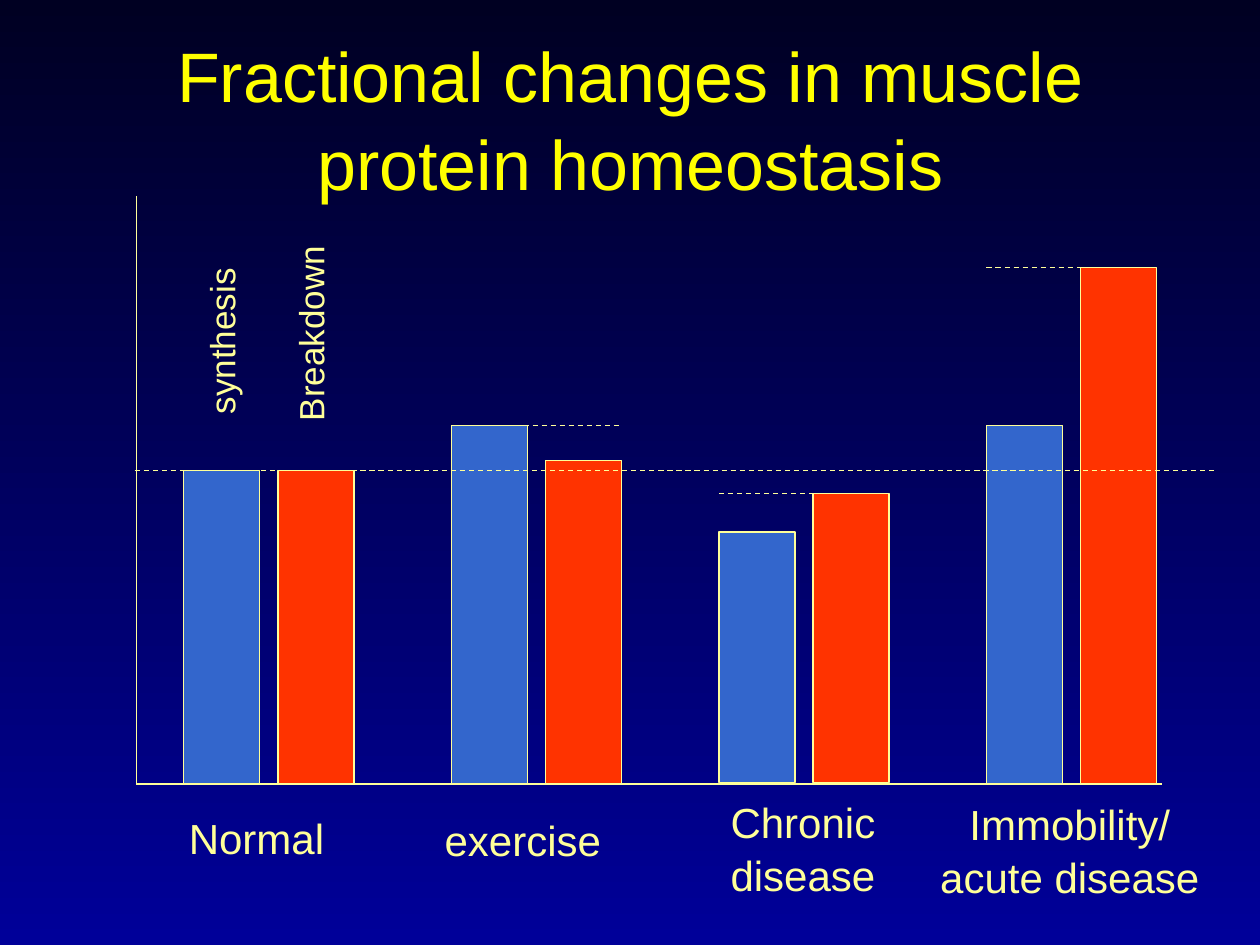
from lxml.etree import SubElement
from pptx import Presentation
from pptx.dml.color import RGBColor
from pptx.enum.dml import MSO_LINE
from pptx.enum.shapes import MSO_CONNECTOR, MSO_SHAPE
from pptx.enum.text import MSO_ANCHOR, PP_ALIGN
from pptx.oxml.ns import qn
from pptx.util import Pt

PALE, YELLOW = "FFFF99", "FFFF00"
SYNTHESIS, BREAKDOWN = "3366CC", "FF3300"


def rgb(hex_string):
    return RGBColor.from_string(hex_string)


def apply_format(target, values):
    for attribute, value in values.items():
        setattr(target, attribute, value)


class SlideBuilder:
    font = "Arial"
    line_width = 0.75

    def __init__(self, slide):
        self.slide = slide

    def background(self, top, bottom):
        fill = self.slide.background.fill
        fill.gradient()
        fill.gradient_angle = 270
        for stop, color in zip(fill.gradient_stops, (top, bottom)):
            stop.color.rgb = rgb(color)

    def set_text(self, frame, text, size, color, align):
        frame.text = text
        paragraph = frame.paragraphs[0]
        apply_format(paragraph, {"alignment": align, "line_spacing": 1.05})
        apply_format(paragraph.runs[0].font, {"name": self.font, "size": Pt(size)})
        paragraph.runs[0].font.color.rgb = rgb(color)

    def title(self, text, left, top, width, height):
        title = self.slide.shapes.title
        apply_format(title, {"left": Pt(left), "top": Pt(top),
                             "width": Pt(width), "height": Pt(height)})
        apply_format(title.text_frame, {"vertical_anchor": MSO_ANCHOR.MIDDLE,
                                        "word_wrap": True})
        self.set_text(title.text_frame, text, 40, YELLOW, PP_ALIGN.CENTER)

    def label(self, text, box, size=24, wrap=False, rotation=0):
        label = self.slide.shapes.add_textbox(*map(Pt, box))
        label.rotation = rotation
        label.text_frame.word_wrap = wrap
        align = PP_ALIGN.CENTER if wrap else PP_ALIGN.LEFT
        self.set_text(label.text_frame, text, size, PALE, align)

    def line(self, x1, y1, x2, y2, dashed=False):
        line = self.slide.shapes.add_connector(
            MSO_CONNECTOR.STRAIGHT, *map(Pt, (x1, y1, x2, y2)))
        self.outline(line)
        if dashed:
            line.line.dash_style = MSO_LINE.DASH
        SubElement(line._element.spPr, qn("a:effectLst"))

    def outline(self, shape):
        shape.line.color.rgb = rgb(PALE)
        shape.line.width = Pt(self.line_width)

    def bar_pair(self, left, tops, foot, width, step):
        pair = self.slide.shapes.add_group_shape()
        for index, (top, color) in enumerate(zip(tops, (SYNTHESIS, BREAKDOWN))):
            bar = pair.shapes.add_shape(
                MSO_SHAPE.RECTANGLE,
                *map(Pt, (left + index * step, top, width, foot - top)))
            bar.shadow.inherit = False
            bar.fill.solid()
            bar.fill.fore_color.rgb = rgb(color)
            self.outline(bar)


def main():
    deck = Presentation()
    apply_format(deck, {"slide_width": Pt(720), "slide_height": Pt(540)})
    builder = SlideBuilder(deck.slides.add_slide(deck.slide_layouts[5]))
    builder.background("000022", "000099")
    builder.title("Fractional changes in muscle protein homeostasis",
                  36, 21.6, 648, 90)

    axis_x, baseline, normal_level = 78, 448, 269
    first_left, group_step, bar_width, bar_step = 105, 152.9, 43.5, 53.8
    builder.line(axis_x, 112, axis_x, baseline)
    builder.line(axis_x, baseline, 664, baseline)

    # Tops of the synthesis and breakdown bars, and the foot of each pair
    pairs = [
        ((normal_level, normal_level), baseline),
        ((243, 263), baseline),
        ((304, 282), baseline - 1),
        ((243, 153), baseline),
    ]
    lefts = [first_left + index * group_step for index in range(len(pairs))]
    for left, (tops, foot) in zip(lefts, pairs):
        builder.bar_pair(left, tops, foot, bar_width, bar_step)

    builder.line(axis_x - 1, normal_level, 695, normal_level, dashed=True)
    for left, (tops, _) in zip(lefts[1:], pairs[1:]):
        builder.line(left, min(tops), left + 98, min(tops), dashed=True)

    builder.label("Normal", (100.8, 459.4, 92, 36))
    builder.label("exercise", (247, 460.4, 104, 36))
    builder.label("Chronic disease", (401.8, 450, 114, 65), wrap=True)
    builder.label("Immobility/ acute disease", (520.6, 451.4, 181.4, 65), wrap=True)
    builder.label("synthesis", (76.3, 179.3, 98, 31), size=20, rotation=270)
    builder.label("Breakdown", (118.8, 175, 114.5, 31), size=20, rotation=270)
    deck.save("out.pptx")


if __name__ == "__main__":
    main()
